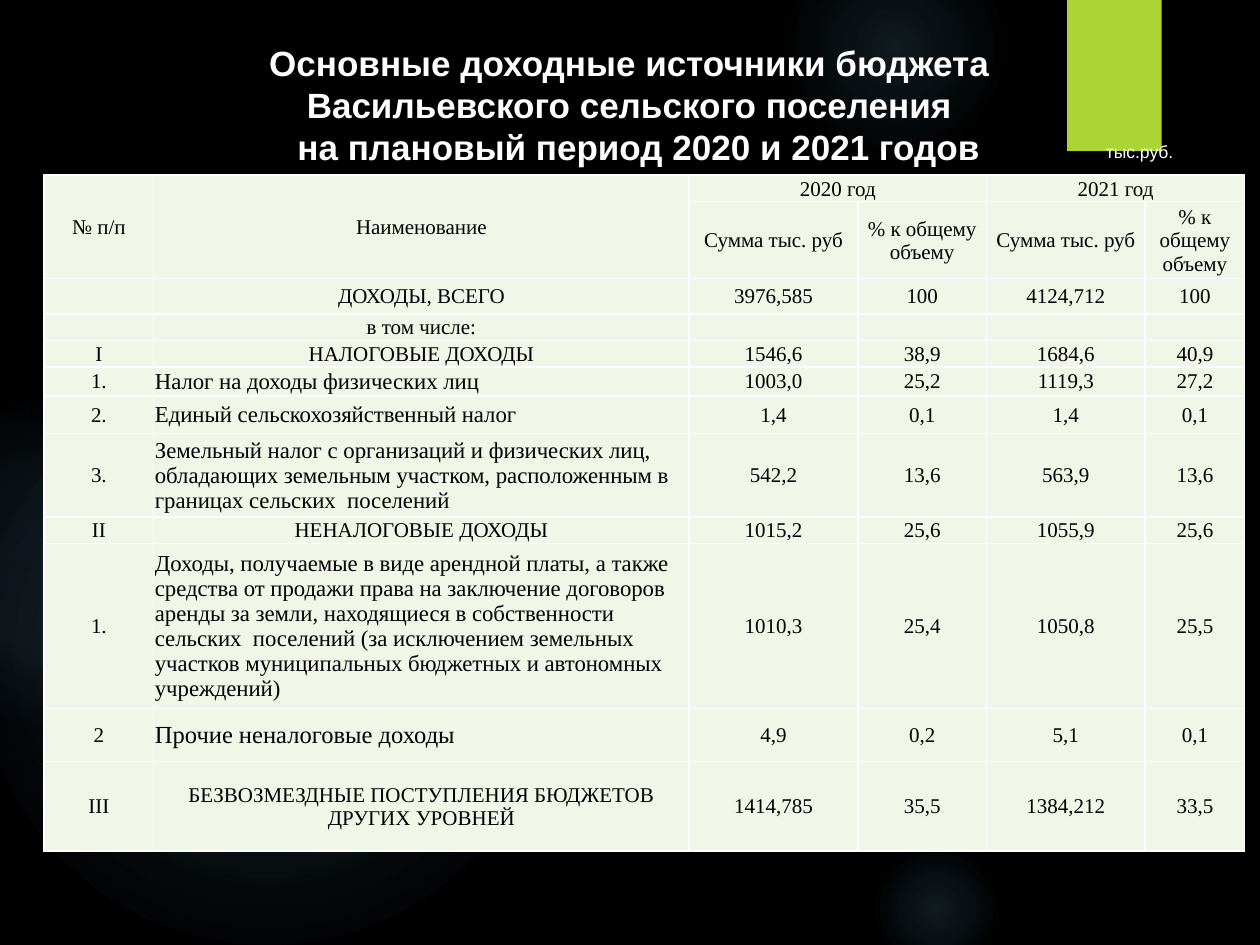
from lxml.etree import SubElement
from pptx import Presentation
from pptx.dml.color import RGBColor
from pptx.enum.shapes import MSO_SHAPE
from pptx.enum.text import MSO_ANCHOR, PP_ALIGN
from pptx.oxml import parse_xml
from pptx.oxml.ns import nsdecls, qn
from pptx.util import Inches, Pt

BLACK = RGBColor(0x00, 0x00, 0x00)
WHITE = RGBColor(0xFF, 0xFF, 0xFF)
LIME = RGBColor(0xAC, 0xD4, 0x33)
GLOW = RGBColor(0x7A, 0xC4, 0xF0)
CELL = RGBColor(0xF1, 0xF7, 0xE8)

# Left, top, diameter, then (position %, opacity %) from the centre out
GLOWS = [
    (6.89, 1.83, 3.08, [(0, 7), (36, 6), (69, 0)]),
    (6.22, -0.5, 1.75, [(0, 14), (36, 7), (73, 0)]),
    (6.89, 6.67, 1.08, [(0, 14), (36, 7), (66, 0)]),
    (-0.17, 2.92, 4.58, [(0, 11), (36, 10), (75, 0)]),
    (-0.92, 3.17, 2.58, [(0, 8), (36, 8), (72, 0)]),
]

COLUMN_WIDTHS = [0.87, 4.25, 1.34, 1.02, 1.26, 0.79]
ROW_HEIGHTS = [0.21, 0.61, 0.28, 0.21, 0.21, 0.23, 0.3, 0.66, 0.21, 1.31, 0.42, 0.71]
INCOME = [
    ["№ п/п", "Наименование", "2020 год", "", "2021 год", ""],
    ["", ""] + ["Сумма тыс. руб", "% к общему объему"] * 2,
    ["", "ДОХОДЫ, ВСЕГО", "3976,585", "100", "4124,712", "100"],
    ["", "в том числе:", "", "", "", ""],
    ["I", "НАЛОГОВЫЕ ДОХОДЫ", "1546,6", "38,9", "1684,6", "40,9"],
    ["1.", "Налог на доходы физических лиц", "1003,0", "25,2", "1119,3", "27,2"],
    ["2.", "Единый сельскохозяйственный налог", "1,4", "0,1", "1,4", "0,1"],
    ["3.", "Земельный налог с организаций и физических лиц, обладающих земельным "
     "участком, расположенным в границах сельских  поселений",
     "542,2", "13,6", "563,9", "13,6"],
    ["II", "НЕНАЛОГОВЫЕ ДОХОДЫ", "1015,2", "25,6", "1055,9", "25,6"],
    ["1.", "Доходы, получаемые в виде арендной платы, а также средства от продажи "
     "права на заключение договоров аренды за земли, находящиеся в собственности "
     "сельских  поселений (за исключением земельных участков муниципальных "
     "бюджетных и автономных учреждений)",
     "1010,3", "25,4", "1050,8", "25,5"],
    ["2", "Прочие неналоговые доходы", "4,9", "0,2", "5,1", "0,1"],
    ["III", "БЕЗВОЗМЕЗДНЫЕ ПОСТУПЛЕНИЯ БЮДЖЕТОВ ДРУГИХ УРОВНЕЙ",
     "1414,785", "35,5", "1384,212", "33,5"],
]
MERGES = [((0, 0), (1, 0)), ((0, 1), (1, 1)), ((0, 2), (0, 3)), ((0, 4), (0, 5))]
# Left-aligned names of single income items: row -> text size
ITEM_SIZES = {5: 13, 6: 13, 7: 13, 9: 13, 10: 14}


class BudgetSlide:
    heading_font = "Arial"
    table_font = "Times New Roman"

    def __init__(self, slide):
        self.slide = slide
        background = slide.background.fill
        background.solid()
        background.fore_color.rgb = BLACK

    def shape(self, preset, left, top, width, height, color):
        shape = self.slide.shapes.add_shape(
            preset, Inches(left), Inches(top), Inches(width), Inches(height))
        shape.shadow.inherit = False
        shape.fill.solid()
        shape.fill.fore_color.rgb = color
        shape.line.fill.background()
        return shape

    def glow(self, left, top, diameter, stops):
        circle = self.shape(MSO_SHAPE.OVAL, left, top, diameter, diameter, GLOW)
        stop_xml = "".join(
            f'<a:gs pos="{position * 1000}"><a:srgbClr val="{GLOW}">'
            f'<a:alpha val="{opacity * 1000}"/></a:srgbClr></a:gs>'
            for position, opacity in stops)
        gradient = parse_xml(
            f'<a:gradFill {nsdecls("a")} rotWithShape="1"><a:gsLst>{stop_xml}</a:gsLst>'
            '<a:path path="circle"><a:fillToRect l="50000" t="50000" r="50000" b="50000"/>'
            '</a:path></a:gradFill>')
        properties = circle.element.spPr
        properties.replace(properties.find(qn("a:solidFill")), gradient)

    def run(self, paragraph, text, size, font, color, bold=False):
        run = paragraph.add_run()
        run.text = text
        run.font.size = Pt(size)
        run.font.name = font
        run.font.color.rgb = color
        run.font.bold = bold

    def text(self, left, top, width, height, lines, size, align, bold=False):
        frame = self.slide.shapes.add_textbox(
            Inches(left), Inches(top), Inches(width), Inches(height)).text_frame
        frame.word_wrap = True
        for number, line in enumerate(lines):
            paragraph = frame.add_paragraph() if number else frame.paragraphs[0]
            paragraph.alignment = align
            self.run(paragraph, line, size, self.heading_font, WHITE, bold)
        return frame

    def border(self, cell):
        properties = cell._tc.get_or_add_tcPr()
        for side in ("lnL", "lnR", "lnT", "lnB"):
            line = SubElement(properties, qn(f"a:{side}"), w=str(Pt(1)))
            SubElement(SubElement(line, qn("a:solidFill")), qn("a:srgbClr"), val=str(WHITE))

    def cell(self, cell, text, size, align):
        self.border(cell)
        cell.fill.solid()
        cell.fill.fore_color.rgb = CELL
        cell.vertical_anchor = MSO_ANCHOR.MIDDLE
        cell.margin_left = cell.margin_right = cell.margin_top = Inches(0.01)
        cell.margin_bottom = 0
        paragraph = cell.text_frame.paragraphs[0]
        paragraph.alignment = align
        if text:
            self.run(paragraph, text, size, self.table_font, BLACK)
        else:
            SubElement(paragraph._p, qn("a:endParaRPr"), sz=str(size * 100))

    def table(self, left, top, widths, heights, rows):
        table = self.slide.shapes.add_table(
            len(rows), len(widths), Inches(left), Inches(top),
            Inches(sum(widths)), Inches(sum(heights))).table
        table.first_row = table.horz_banding = False
        for column, width in zip(table.columns, widths):
            column.width = Inches(width)
        for row, height in zip(table.rows, heights):
            row.height = Inches(height)
        for r, values in enumerate(rows):
            for c, value in enumerate(values):
                is_item = c == 1 and r in ITEM_SIZES
                self.cell(table.cell(r, c), value,
                          ITEM_SIZES[r] if is_item else 12,
                          PP_ALIGN.LEFT if is_item else PP_ALIGN.CENTER)
        for first, last in MERGES:
            table.cell(*first).merge(table.cell(*last))


def main():
    presentation = Presentation()
    presentation.slide_width = Inches(10)
    presentation.slide_height = Inches(7.5)
    budget = BudgetSlide(presentation.slides.add_slide(presentation.slide_layouts[6]))

    # Backdrop
    for glow in GLOWS:
        budget.glow(*glow)
    budget.shape(MSO_SHAPE.RECTANGLE, 8.47, 0, 0.75, 1.2, LIME)

    # Heading, its last line set slightly to the right
    heading = budget.text(
        1.21, 0.28, 7.57, 1.25,
        ["Основные доходные источники бюджета Васильевского сельского поселения",
         "на плановый период 2020 и 2021 годов"],
        20, PP_ALIGN.CENTER, bold=True)
    heading.paragraphs[1]._p.get_or_add_pPr().set("marL", str(Inches(0.15)))
    for paragraph in heading.paragraphs:
        paragraph.line_spacing = Pt(24)

    # Unit of measure
    budget.text(7.68, 1.07, 1.73, 0.27, ["тыс.руб."], 10, PP_ALIGN.RIGHT)

    # Income table
    budget.table(0.35, 1.39, COLUMN_WIDTHS, ROW_HEIGHTS, INCOME)

    presentation.save("out.pptx")


if __name__ == "__main__":
    main()
